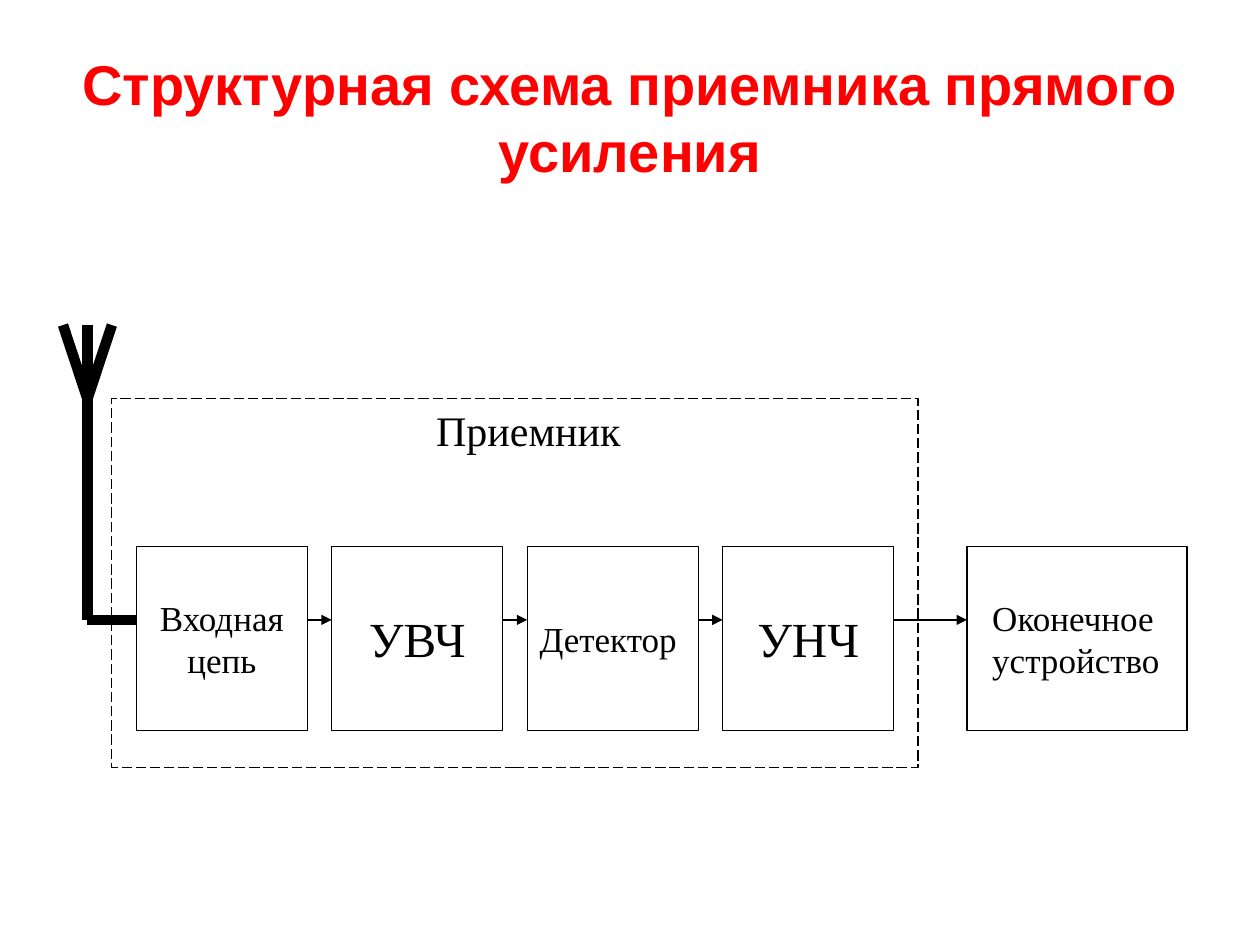
from dataclasses import dataclass

from lxml import etree
from pptx import Presentation
from pptx.dml.color import RGBColor
from pptx.enum.dml import MSO_LINE
from pptx.enum.shapes import MSO_CONNECTOR, MSO_SHAPE
from pptx.enum.text import MSO_ANCHOR, PP_ALIGN
from pptx.oxml.ns import qn
from pptx.util import Inches, Pt

STRAIGHT = MSO_CONNECTOR.STRAIGHT
RECTANGLE = MSO_SHAPE.RECTANGLE
LONG_DASH = MSO_LINE.LONG_DASH
TOP, MIDDLE = MSO_ANCHOR.TOP, MSO_ANCHOR.MIDDLE
LEFT, CENTER = PP_ALIGN.LEFT, PP_ALIGN.CENTER


@dataclass(frozen=True)
class Theme:
    """Colours, fonts and sizes of the slide."""

    ink: RGBColor = RGBColor(0, 0, 0)
    paper: RGBColor = RGBColor(255, 255, 255)
    accent: RGBColor = RGBColor(255, 0, 0)
    title_font: str = "Arial"
    label_font: str = "Times New Roman"
    title_size: int = 32
    short_size: int = 28
    frame_size: int = 24
    long_size: int = 20
    thin: float = 0.75
    thick: float = 6
    opacity: int = 34


@dataclass(frozen=True)
class Grid:
    """Columns and rows laid over a box given in inches."""

    left: float
    top: float
    width: float
    height: float
    columns: int
    rows: int

    def x(self, column):
        """Return the position of a column line."""
        return Inches(self.left + column * self.width / self.columns)

    def y(self, row):
        """Return the position of a row line."""
        return Inches(self.top + row * self.height / self.rows)

    def box(self, column, row, columns, rows):
        """Return left, top, width and height of a block of cells."""
        left, top = self.x(column), self.y(row)
        return left, top, self.x(column + columns) - left, self.y(row + rows) - top


THEME = Theme()


def apply_format(target, values):
    """Set every attribute named in a dict of format values."""
    for name, value in values.items():
        setattr(target, name, value)


def write(frame, words, size, color, font, align=CENTER, anchor=MIDDLE, bold=False, indent=0.1):
    """Fill a text frame with one formatted paragraph."""
    apply_format(frame, {"word_wrap": True, "vertical_anchor": anchor, "margin_left": Inches(indent)})
    paragraph = frame.paragraphs[0]
    paragraph.alignment = align
    run = paragraph.add_run()
    run.text = words
    apply_format(run.font, {"size": Pt(size), "name": font, "bold": bold})
    run.font.color.rgb = color


def add_title(slide, box, words):
    """Place the heading in its box."""
    heading = slide.shapes.add_textbox(*box)
    write(heading.text_frame, words, THEME.title_size, THEME.accent, THEME.title_font, bold=True)


def add_block(slide, box, words, size, dash=None, **layout):
    """Place one outlined, translucent block with its label."""
    block = slide.shapes.add_shape(RECTANGLE, *box)
    block.shadow.inherit = False
    block.fill.solid()
    block.fill.fore_color.rgb = THEME.paper
    tint = block.element.spPr.find(qn("a:solidFill"))[0]
    etree.SubElement(tint, qn("a:alpha"), val=str(THEME.opacity * 1000))
    block.line.color.rgb = THEME.ink
    apply_format(block.line, {"width": Pt(THEME.thin), "dash_style": dash})
    write(block.text_frame, words, size, THEME.ink, THEME.label_font, **layout)


def add_wire(slide, grid, start, end, weight, arrow=False):
    """Draw a line between two grid points, with an arrowhead if asked."""
    wire = slide.shapes.add_connector(
        STRAIGHT, grid.x(start[0]), grid.y(start[1]), grid.x(end[0]), grid.y(end[1])
    )
    wire.line.color.rgb = THEME.ink
    wire.line.width = Pt(weight)
    if arrow:
        etree.SubElement(wire.line._get_or_add_ln(), qn("a:tailEnd"), type="triangle")
    etree.SubElement(wire.element.spPr, qn("a:effectLst"))


def add_antenna(slide, grid, signal_row):
    """Draw the antenna mast, its two arms and the lead to the first stage."""
    foot, fork = (1, signal_row), (1, 1)
    for start, end in (((3, signal_row), foot), (foot, (1, 0)), (fork, (2, 0)), (fork, (0, 0))):
        add_wire(slide, grid, start, end, THEME.thick)


def add_receiver(slide, grid):
    """Draw the receiver chain from the antenna to the output device."""
    signal_row, stage_row, stage_rows = 4, 3, 2.5
    first, stage_width, pitch = 3, 7, 8
    output_column, output_width = 37, 9
    stages = (
        ("Входная цепь", THEME.long_size, CENTER),
        ("УВЧ", THEME.short_size, CENTER),
        ("Детектор", THEME.long_size, LEFT),
        ("УНЧ", THEME.short_size, CENTER),
    )
    add_block(slide, grid.box(2, 1, 33, 5), "Приемник", THEME.frame_size,
              dash=LONG_DASH, anchor=TOP, indent=0.31)
    columns = [first + index * pitch for index in range(len(stages))]
    for column, (words, size, align) in zip(columns, stages):
        add_block(slide, grid.box(column, stage_row, stage_width, stage_rows), words, size, align=align)
    add_block(slide, grid.box(output_column, stage_row, output_width, stage_rows),
              "Оконечное устройство", THEME.long_size, align=LEFT, indent=0.2)
    for column, target in zip(columns, columns[1:] + [output_column]):
        add_wire(slide, grid, (column + stage_width, signal_row), (target, signal_row),
                 THEME.thin, arrow=True)
    add_antenna(slide, grid, signal_row)


def main():
    """Build and save the slide."""
    deck = Presentation()
    apply_format(deck, {"slide_width": Inches(10), "slide_height": Inches(7.5)})
    slide = deck.slides.add_slide(deck.slide_layouts[6])
    page = Grid(0, 0, 10, 7.5, 20, 25)
    add_title(slide, page.box(1, 1, 18, 4.17), "Структурная схема приемника прямого усиления")
    add_receiver(slide, Grid(0.5, 2.58, 8.92, 3.51, 46, 6))
    deck.save("out.pptx")


if __name__ == "__main__":
    main()
